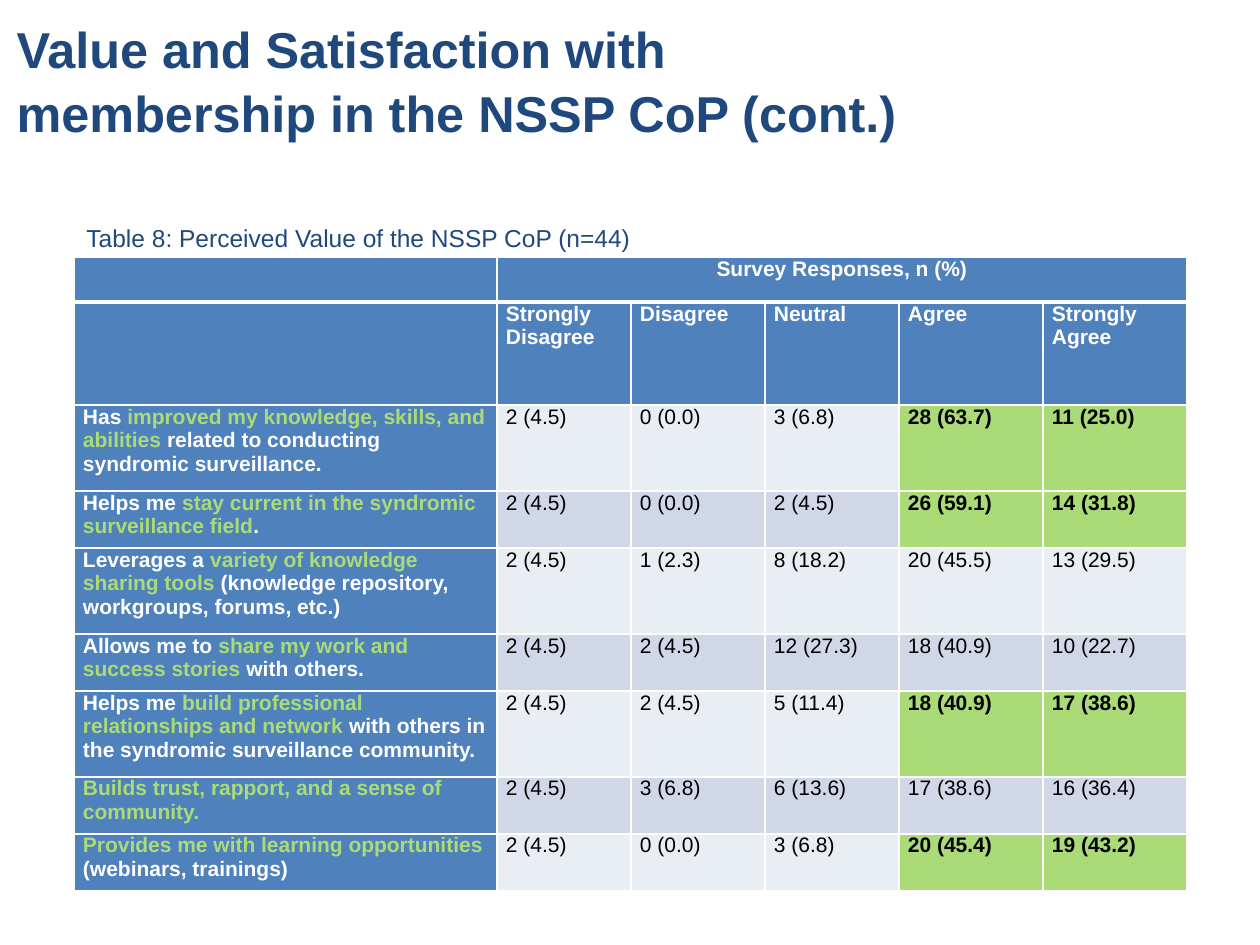
from dataclasses import dataclass

from lxml.etree import SubElement as Sub
from pptx import Presentation as Deck
from pptx.dml.color import RGBColor as Rgb
from pptx.enum.text import MSO_ANCHOR as Anchor, PP_ALIGN as Align
from pptx.oxml.ns import qn
from pptx.util import Pt

PX = 914400 / 126


@dataclass(frozen=True)
class Theme:
    font: str = "Arial"
    navy: str = "1F497D"
    blue: str = "4F81BD"
    green: str = "ABDB77"
    white: str = "FFFFFF"
    black: str = "000000"
    bands: tuple = ("E9EDF4", "D0D8E8")
    title: float = 28.8
    note: float = 14
    cell: float = 12


def emu(px):
    return round(px * PX)


def put(obj, **vals):
    for key, val in vals.items():
        setattr(obj, key, val)


def place(shape, box):
    put(shape, **dict(zip(("left", "top", "width", "height"), map(emu, box))))


class Page:
    def __init__(self, slide, theme):
        self.slide, self.theme = slide, theme

    def text(self, para, words, size, color, bold=False, accent=None):
        """Add words to a paragraph; parts between asterisks take the accent."""
        for i, part in enumerate(words.split("*")):
            if part:
                run = para.add_run()
                run.text = part
                put(run.font, name=self.theme.font, size=Pt(size), bold=bold)
                run.font.color.rgb = Rgb.from_string(accent if i % 2 else color)

    def title(self, words, box):
        shape = self.slide.shapes.title
        place(shape, box)
        put(shape.text_frame, word_wrap=True, vertical_anchor=Anchor.MIDDLE)
        para = shape.text_frame.paragraphs[0]
        put(para, alignment=Align.LEFT, line_spacing=1.05)
        self.text(para, words, self.theme.title, self.theme.navy, True)

    def note(self, words, box):
        frame = self.slide.shapes.add_textbox(*map(emu, box)).text_frame
        frame.word_wrap = True
        self.text(frame.paragraphs[0], words, self.theme.note, self.theme.navy)

    def table(self, spot, cols, rows):
        """Add an empty table with the given column widths and row heights."""
        box = (*spot, sum(cols), sum(rows))
        grid = self.slide.shapes.add_table(len(rows), len(cols), *map(emu, box)).table
        for col, wide in zip(grid.columns, cols):
            col.width = emu(wide)
        for row, high in zip(grid.rows, rows):
            row.height = emu(high)
        return grid

    def cell(self, cell, words, fill, color, bold=False, top=1, base=1, align=Align.LEFT):
        put(cell, margin_left=emu(9), margin_right=emu(9), margin_top=0, margin_bottom=0)
        for side, wide in zip("LRTB", (1, 1, top, base)):
            line = Sub(cell._tc.get_or_add_tcPr(), qn(f"a:ln{side}"), w=str(Pt(wide)))
            Sub(Sub(line, qn("a:solidFill")), qn("a:srgbClr"), val=self.theme.white)
        cell.fill.solid()
        cell.fill.fore_color.rgb = Rgb.from_string(fill)
        para = cell.text_frame.paragraphs[0]
        para.alignment = align
        self.text(para, words, self.theme.cell, color, bold, self.theme.green)


HEADS = ["", "Strongly Disagree", "Disagree", "Neutral", "Agree", "Strongly Agree"]

# Statement, answers, whether the agreement is marked
ITEMS = [
    ("Has *improved my knowledge, skills, and abilities *related to conducting "
     "syndromic surveillance.",
     ["2 (4.5)", "0 (0.0)", "3 (6.8)", "28 (63.7)", "11 (25.0)"], True),
    ("Helps me *stay current in the syndromic surveillance field*.",
     ["2 (4.5)", "0 (0.0)", "2 (4.5)", "26 (59.1)", "14 (31.8)"], True),
    ("Leverages a *variety of knowledge sharing tools* (knowledge repository, "
     "workgroups, forums, etc.)",
     ["2 (4.5)", "1 (2.3)", "8 (18.2)", "20 (45.5)", "13 (29.5)"], False),
    ("Allows me to *share my work and success stories *with others.",
     ["2 (4.5)", "2 (4.5)", "12 (27.3)", "18 (40.9)", "10 (22.7)"], False),
    ("Helps me *build professional relationships and network* with others in "
     "the syndromic surveillance community.",
     ["2 (4.5)", "2 (4.5)", "5 (11.4)", "18 (40.9)", "17 (38.6)"], True),
    ("*Builds trust, rapport, and a sense of community.*",
     ["2 (4.5)", "3 (6.8)", "6 (13.6)", "17 (38.6)", "16 (36.4)"], False),
    ("*Provides me with learning opportunities *(webinars, trainings)",
     ["2 (4.5)", "0 (0.0)", "3 (6.8)", "20 (45.4)", "19 (43.2)"], True),
]


def main():
    deck = Deck()
    put(deck, slide_width=emu(1260), slide_height=emu(945))
    look = Theme()
    page = Page(deck.slides.add_slide(deck.slide_layouts[5]), look)
    page.title("Value and Satisfaction with membership in the NSSP CoP (cont.)",
               (4, 0, 917, 158))

    tall, low = 86, 57
    grid = page.table((74, 257), [423] + [134] * 3 + [144] * 2,
                      [45, 103] + [tall, low] * 3 + [low])
    grid.cell(0, 1).merge(grid.cell(0, 5))
    for c, head in enumerate(HEADS):
        span = "Survey Responses, n (%)" if c == 1 else ""
        page.cell(grid.cell(0, c), span, look.blue, look.white, True,
                  base=3, align=Align.CENTER)
        page.cell(grid.cell(1, c), head, look.blue, look.white, True, top=3)
    for r, (label, answers, marked) in enumerate(ITEMS):
        page.cell(grid.cell(r + 2, 0), label, look.blue, look.white, True)
        for c, answer in enumerate(answers, 1):
            hot = marked and c > 3
            fill = look.green if hot else look.bands[r % 2]
            page.cell(grid.cell(r + 2, c), answer, fill, look.black, hot)

    page.note("Table 8: Perceived Value of the NSSP CoP (n=44)", (74, 217, 1029, 43))
    deck.save("out.pptx")


if __name__ == "__main__":
    main()
